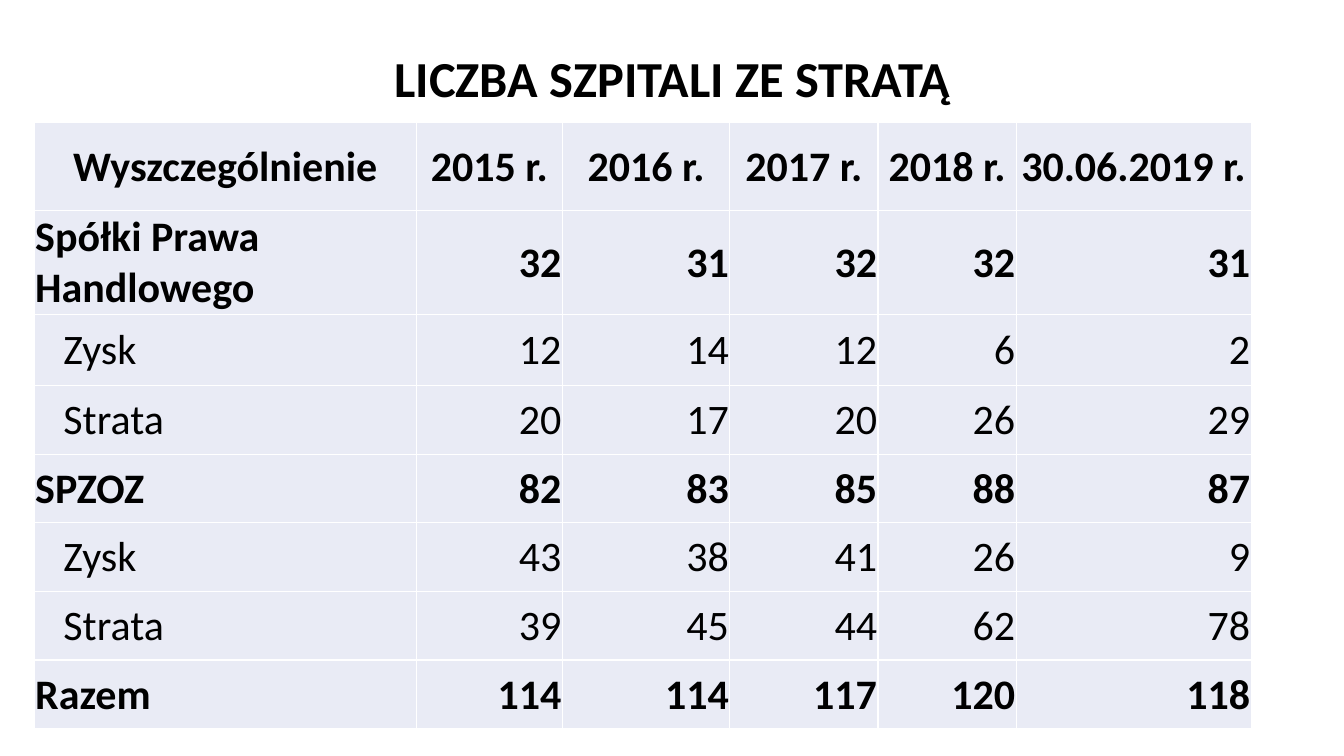
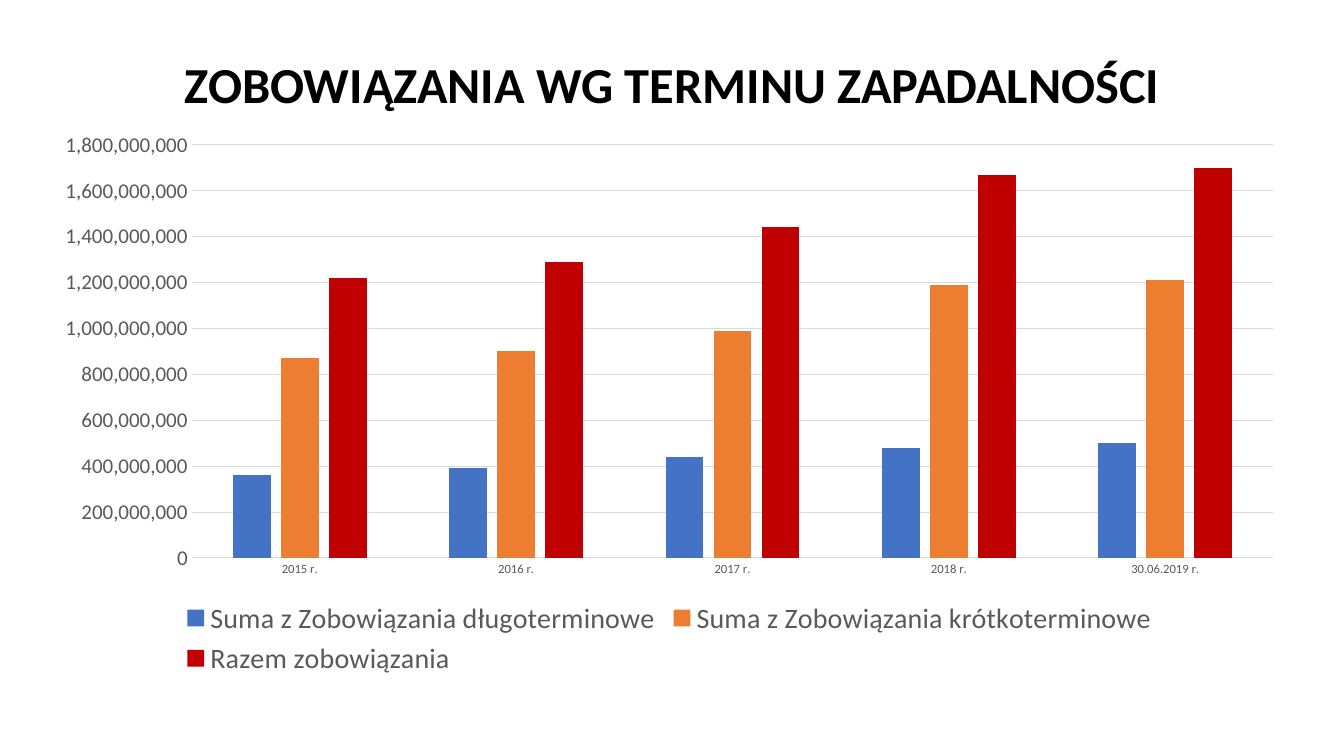
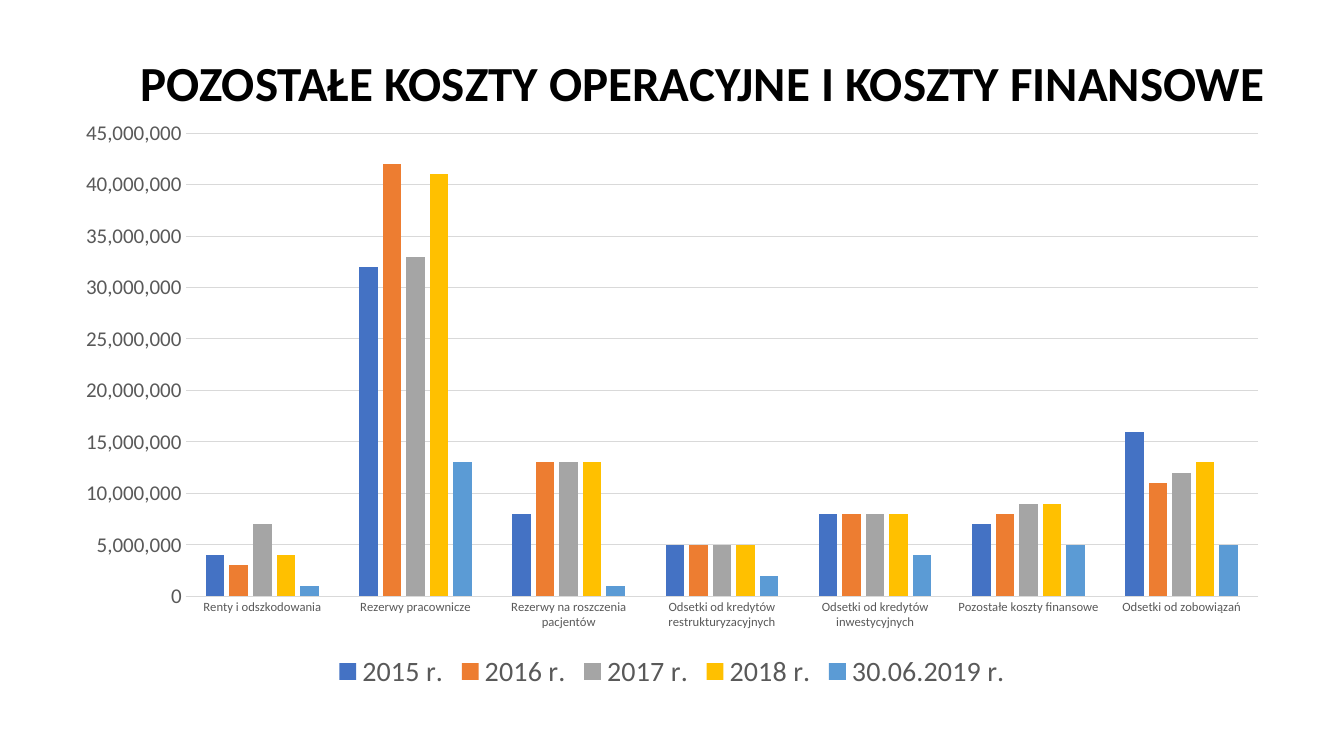
from lxml.etree import SubElement
from pptx import Presentation
from pptx.chart.data import CategoryChartData
from pptx.dml.color import RGBColor
from pptx.enum.chart import XL_CHART_TYPE, XL_LEGEND_POSITION, XL_TICK_MARK
from pptx.enum.text import MSO_ANCHOR, MSO_AUTO_SIZE, PP_ALIGN
from pptx.oxml.ns import qn
from pptx.util import Inches, Pt

SLIDE_WIDTH, SLIDE_HEIGHT = Inches(13.33), Inches(7.5)
TITLE_ONLY = 5
FONT = "Calibri"
MILLION = 1_000_000

BLACK = RGBColor(0x00, 0x00, 0x00)
WHITE = RGBColor(0xFF, 0xFF, 0xFF)
CELL_FILL = RGBColor(0xE9, 0xEB, 0xF5)
CHART_TEXT = RGBColor(0x59, 0x59, 0x59)
GRID_LINE = RGBColor(0xD9, 0xD9, 0xD9)
BLUE = RGBColor(0x44, 0x72, 0xC4)
ORANGE = RGBColor(0xED, 0x7D, 0x31)
RED = RGBColor(0xC0, 0x00, 0x00)
GRAY = RGBColor(0xA5, 0xA5, 0xA5)
YELLOW = RGBColor(0xFF, 0xC0, 0x00)
LIGHT_BLUE = RGBColor(0x5B, 0x9B, 0xD5)

PERIODS = ["2015 r.", "2016 r.", "2017 r.", "2018 r.", "30.06.2019 r."]

# Column widths and row heights in percent of the slide
HOSPITAL_COLUMNS = [28.43, 10.88, 12.45, 11.03, 10.28, 17.48]
HOSPITAL_ROWS = [11.73, 9.07, 9.47] + [9.07] * 5
GROUP_ROWS = {"Spółki Prawa Handlowego", "SPZOZ", "Razem"}
HOSPITALS = [
    ("Spółki Prawa Handlowego", 32, 31, 32, 32, 31),
    ("Zysk", 12, 14, 12, 6, 2),
    ("Strata", 20, 17, 20, 26, 29),
    ("SPZOZ", 82, 83, 85, 88, 87),
    ("Zysk", 43, 38, 41, 26, 9),
    ("Strata", 39, 45, 44, 62, 78),
    ("Razem", 114, 114, 117, 120, 118),
]

# Chart values are in millions
LIABILITIES = [
    ("Suma z Zobowiązania długoterminowe", BLUE, [360, 390, 440, 480, 500]),
    ("Suma z Zobowiązania krótkoterminowe", ORANGE, [870, 900, 990, 1190, 1210]),
    ("Razem zobowiązania", RED, [1220, 1290, 1440, 1670, 1700]),
]
COST_KINDS = [
    "Renty i odszkodowania",
    "Rezerwy pracownicze",
    "Rezerwy na roszczenia pacjentów",
    "Odsetki od kredytów restrukturyzacyjnych",
    "Odsetki od kredytów inwestycyjnych",
    "Pozostałe koszty finansowe",
    "Odsetki od zobowiązań",
]
COST_COLORS = [BLUE, ORANGE, GRAY, YELLOW, LIGHT_BLUE]
COST_VALUES = [
    [4, 32, 8, 5, 8, 7, 16],
    [3, 42, 13, 5, 8, 8, 11],
    [7, 33, 13, 5, 8, 9, 12],
    [4, 41, 13, 5, 8, 9, 13],
    [1, 13, 1, 2, 4, 5, 5],
]


def across(percent):
    return round(SLIDE_WIDTH * percent / 100)


def down(percent):
    return round(SLIDE_HEIGHT * percent / 100)


def area(left, top, width, height):
    """Turn percentages of the slide into a position and a size."""
    return across(left), down(top), across(width), down(height)


def format_font(font, size, color, bold=False):
    font.name = FONT
    font.size = Pt(size)
    font.bold = bold
    font.color.rgb = color


def write_text(text_frame, text, *, size, color=BLACK, bold=False,
               align=PP_ALIGN.LEFT, line_spacing=None):
    paragraph = text_frame.paragraphs[0]
    paragraph.alignment = align
    paragraph.line_spacing = line_spacing
    run = paragraph.add_run()
    run.text = text
    format_font(run.font, size, color, bold)


def add_titled_slide(presentation, title, width, height, size=36):
    slide = presentation.slides.add_slide(presentation.slide_layouts[TITLE_ONLY])
    shape = slide.shapes.title
    shape.left, shape.top, shape.width, shape.height = area(6.9, 5.33, width, height)
    text_frame = shape.text_frame
    text_frame.word_wrap = True
    text_frame.auto_size = MSO_AUTO_SIZE.NONE
    text_frame.vertical_anchor = MSO_ANCHOR.MIDDLE
    write_text(text_frame, title, size=size, bold=True,
               align=PP_ALIGN.CENTER, line_spacing=0.9)
    return slide


def add_cell_borders(cell, color, width):
    properties = cell._tc.get_or_add_tcPr()
    for side in ("a:lnL", "a:lnR", "a:lnT", "a:lnB"):
        line = SubElement(properties, qn(side), w=str(Pt(width)))
        fill = SubElement(line, qn("a:solidFill"))
        SubElement(fill, qn("a:srgbClr"), val=str(color))


def fill_cell(cell, text, *, bold, align, indent=0.01):
    add_cell_borders(cell, WHITE, 1)
    cell.fill.solid()
    cell.fill.fore_color.rgb = CELL_FILL
    cell.vertical_anchor = MSO_ANCHOR.MIDDLE
    cell.margin_left = Inches(indent)
    cell.margin_right = cell.margin_top = Inches(0.01)
    cell.margin_bottom = 0
    write_text(cell.text_frame, text, size=30, bold=bold, align=align)


def add_hospital_table(slide):
    frame = slide.shapes.add_table(
        len(HOSPITAL_ROWS), len(HOSPITAL_COLUMNS),
        *area(2.55, 16.13, sum(HOSPITAL_COLUMNS), sum(HOSPITAL_ROWS)))
    table = frame.table
    for column, width in zip(table.columns, HOSPITAL_COLUMNS):
        column.width = across(width)
    for row, height in zip(table.rows, HOSPITAL_ROWS):
        row.height = down(height)

    for index, heading in enumerate(["Wyszczególnienie"] + PERIODS):
        fill_cell(table.cell(0, index), heading, bold=True, align=PP_ALIGN.CENTER)
    for row_index, (label, *counts) in enumerate(HOSPITALS, start=1):
        is_group = label in GROUP_ROWS
        fill_cell(table.cell(row_index, 0), label, bold=is_group,
                  align=PP_ALIGN.LEFT, indent=0.01 if is_group else 0.29)
        for column_index, count in enumerate(counts, start=1):
            fill_cell(table.cell(row_index, column_index), str(count),
                      bold=is_group, align=PP_ALIGN.RIGHT)


def format_axis(axis, size):
    axis.major_tick_mark = axis.minor_tick_mark = XL_TICK_MARK.NONE
    format_font(axis.tick_labels.font, size, CHART_TEXT)


def format_line(line):
    line.color.rgb = GRID_LINE
    line.width = Pt(0.75)


def add_column_chart(slide, position, categories, series_rows, maximum, step):
    """Draw clustered columns; values, maximum and step are in millions."""
    data = CategoryChartData(number_format="#,##0")
    data.categories = categories
    for name, _, values in series_rows:
        data.add_series(name, [value * MILLION for value in values])
    chart = slide.shapes.add_chart(
        XL_CHART_TYPE.COLUMN_CLUSTERED, *position, data).chart
    chart.has_title = False
    format_font(chart.font, 10, BLACK)

    chart.has_legend = True
    chart.legend.position = XL_LEGEND_POSITION.BOTTOM
    chart.legend.include_in_layout = False
    format_font(chart.legend.font, 20, CHART_TEXT)

    format_axis(chart.category_axis, 9)
    format_line(chart.category_axis.format.line)

    value_axis = chart.value_axis
    format_axis(value_axis, 15)
    value_axis.format.line.fill.background()
    value_axis.minimum_scale = 0
    value_axis.maximum_scale = maximum * MILLION
    value_axis.major_unit = step * MILLION
    value_axis.tick_labels.number_format = "#,##0"
    value_axis.tick_labels.number_format_is_linked = False
    value_axis.has_major_gridlines = True
    format_line(value_axis.major_gridlines.format.line)

    plot = chart.plots[0]
    plot.gap_width = 219
    plot.overlap = -27
    plot.vary_by_categories = False
    for series, (_, color, _) in zip(plot.series, series_rows):
        series.format.fill.solid()
        series.format.fill.fore_color.rgb = color
        series.invert_if_negative = False


def main():
    presentation = Presentation()
    presentation.slide_width = SLIDE_WIDTH
    presentation.slide_height = SLIDE_HEIGHT

    slide = add_titled_slide(presentation, "LICZBA SZPITALI ZE STRATĄ", 86.27, 10.8)
    add_hospital_table(slide)

    slide = add_titled_slide(
        presentation, "ZOBOWIĄZANIA WG TERMINU ZAPADALNOŚCI", 86.27, 12.4)
    add_column_chart(slide, area(3, 16, 93.62, 74.13), PERIODS, LIABILITIES,
                     maximum=1800, step=200)

    slide = add_titled_slide(
        presentation, "POZOSTAŁE KOSZTY OPERACYJNE I KOSZTY FINANSOWE",
        90.85, 12, size=35)
    add_column_chart(slide, area(4.58, 14.4, 90.85, 77.47), COST_KINDS,
                     list(zip(PERIODS, COST_COLORS, COST_VALUES)),
                     maximum=45, step=5)

    presentation.save("out.pptx")


if __name__ == "__main__":
    main()
